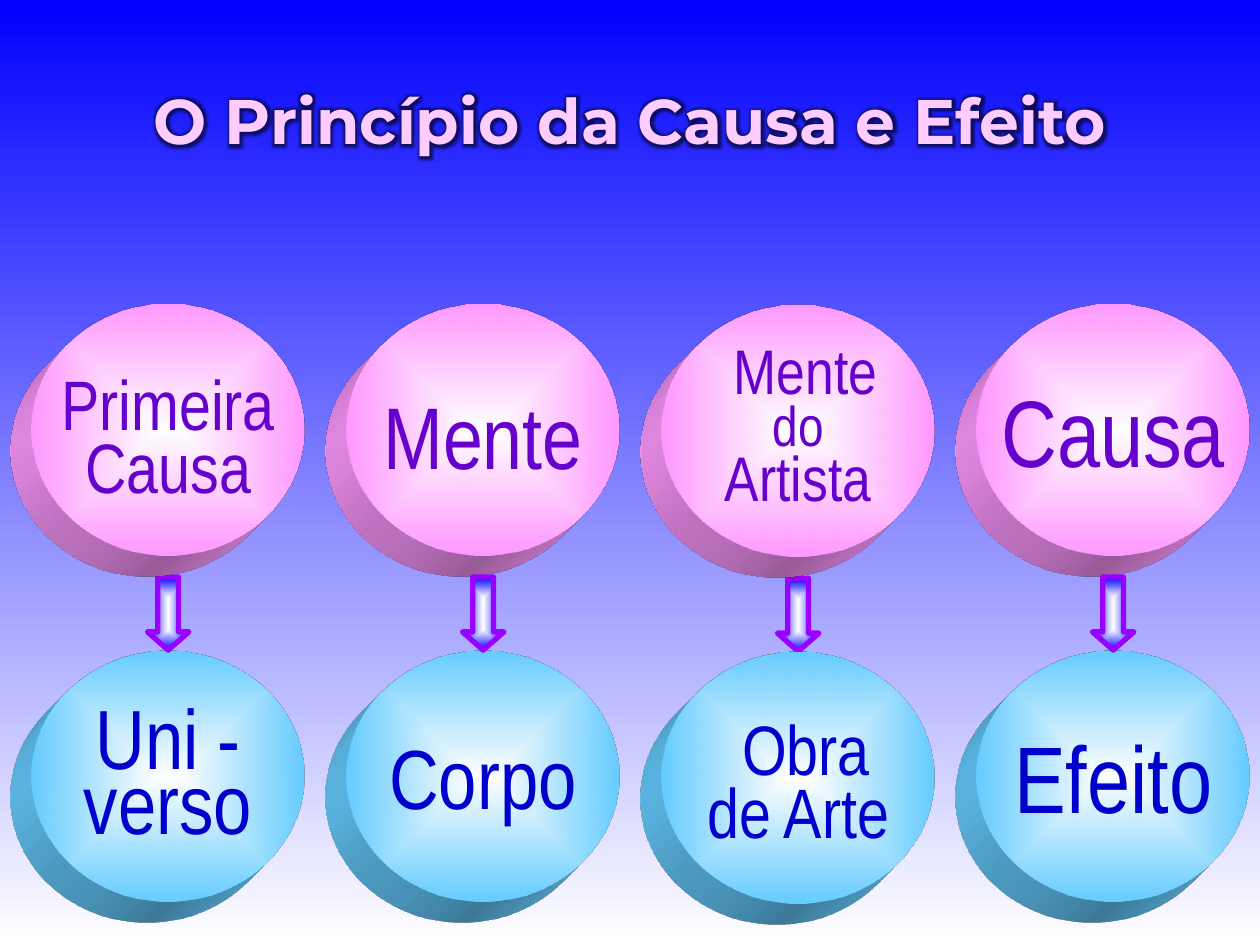
from dataclasses import dataclass

from lxml import etree
from pptx import Presentation
from pptx.dml.color import RGBColor
from pptx.enum.shapes import MSO_SHAPE
from pptx.enum.text import MSO_ANCHOR, MSO_AUTO_SIZE, PP_ALIGN
from pptx.oxml import parse_xml
from pptx.oxml.ns import qn
from pptx.util import Inches, Pt

OVAL, ARROW = MSO_SHAPE.OVAL, MSO_SHAPE.DOWN_ARROW
TOP, MIDDLE = MSO_ANCHOR.TOP, MSO_ANCHOR.MIDDLE
CENTER, FIXED = PP_ALIGN.CENTER, MSO_AUTO_SIZE.NONE
SPACE = 'xmlns:a="http://schemas.openxmlformats.org/drawingml/2006/main"'


@dataclass(frozen=True)
class Theme:
    white: str = "FFFFFF"
    blue: str = "0000FF"
    pink: str = "FF99FF"
    sky: str = "66CCFF"
    violet: str = "6600CC"
    navy: str = "0000CC"
    edge: str = "9900FF"
    blush: str = "FFCCFF"
    rim: str = "000099"
    glow: str = "000000"
    head: str = "Montserrat"
    body: str = "Arial Narrow"
    title: int = 36
    line: int = 3


THEME = Theme()
WIDE, HIGH = 10, 7.5
PITCH = WIDE / 4
INSET = PITCH / 10
DISC = (2.17, 2)
SHAFT = (0.33, 0.58)
ROWS = {"cause": 2.41, "arrow": 4.58, "effect": 5.16}
TINTS = {"cause": (THEME.pink, THEME.violet), "effect": (THEME.sky, THEME.navy)}
COLUMNS = [
    {"order": ("effect", "arrow", "cause"), "drop": 0,
     "cause": {"lines": [("Primeira", 40), ("Causa", 40)], "gap": 0.75, "pad": 0.22},
     "effect": {"lines": [("Uni -", 48), ("verso", 48)], "gap": 0.65, "pad": 0.1}},
    {"order": ("cause", "effect", "arrow"), "drop": 0,
     "cause": {"lines": [("Mente", 50)], "gap": 1.1},
     "effect": {"lines": [("Corpo", 48)]}},
    {"order": ("arrow", "cause", "effect"), "drop": 0.01,
     "cause": {"lines": [(" Mente", 36), ("do", 32), ("Artista", 36)], "gap": 0.75},
     "effect": {"lines": [(" Obra", 40), ("de Arte", 40)], "gap": 0.75, "pad": 0.17}},
    {"order": ("cause", "effect", "arrow"), "drop": 0,
     "cause": {"lines": [("Causa", 54)]},
     "effect": {"lines": [("Efeito", 54)]}},
]


def style(thing, values):
    for name, value in values.items():
        setattr(thing, name, value)


def node(text):
    return parse_xml(text.replace(">", f" {SPACE}>", 1))


def blend(fill, first, last):
    fill.gradient()
    for stop, tint, place in zip(fill.gradient_stops, (first, last), (0, 1)):
        stop.color.rgb = RGBColor.from_string(tint)
        stop.position = place


def blend_down(fill, first, last):
    blend(fill, first, last)
    fill.gradient_angle = 270


def blend_out(shape, tint, kind):
    blend(shape.fill, THEME.white, tint)
    grad = shape._element.spPr.find(qn("a:gradFill"))
    grad.remove(grad.find(qn("a:lin")))
    focus = node(f'<a:path path="{kind}"></a:path>')
    sides = {side: "50000" for side in "ltrb"}
    etree.SubElement(focus, qn("a:fillToRect"), sides)
    grad.append(focus)


def extrude(shape, tint):
    shape._element.spPr.append(node(
        '<a:scene3d><a:camera prst="legacyObliqueBottomLeft"/>'
        '<a:lightRig rig="legacyFlat3" dir="t"/></a:scene3d>'))
    shape._element.spPr.append(node(
        '<a:sp3d extrusionH="430200" prstMaterial="legacyMatte">'
        '<a:bevelT w="13500" h="13500" prst="angle"/>'
        '<a:bevelB w="13500" h="13500" prst="angle"/>'
        f'<a:extrusionClr><a:srgbClr val="{tint}"/></a:extrusionClr></a:sp3d>'))


def write(frame, lines, tint, gap=None, pad=0):
    style(frame, {"word_wrap": False, "auto_size": FIXED, "vertical_anchor": MIDDLE,
                  "margin_top": Inches(0.05 + pad)})
    for spot, (text, size) in enumerate(lines):
        para = frame.add_paragraph() if spot else frame.paragraphs[0]
        style(para, {"alignment": CENTER, "line_spacing": gap})
        run = para.add_run()
        run.text = text
        style(run.font, {"name": THEME.body, "size": Pt(size)})
        run.font.color.rgb = RGBColor.from_string(tint)


def add_form(slide, kind, left, top, size):
    box = [Inches(part) for part in (left, top, *size)]
    shape = slide.shapes.add_shape(kind, *box)
    shape.shadow.inherit = False
    return shape


def add_disc(slide, left, top, tints, words):
    face, ink = tints
    disc = add_form(slide, OVAL, left, top, DISC)
    blend_out(disc, face, "shape")
    disc.line.fill.background()
    extrude(disc, face)
    write(disc.text_frame, tint=ink, **words)


def add_arrow(slide, left, top):
    arrow = add_form(slide, ARROW, left, top, SHAFT)
    arrow.adjustments[0], arrow.adjustments[1] = 0.5, 0.44
    blend_out(arrow, THEME.blue, "rect")
    arrow.line.color.rgb = RGBColor.from_string(THEME.edge)
    arrow.line.width = Pt(THEME.line)


def add_column(slide, index, column):
    left = index * PITCH + INSET
    for part in column["order"]:
        top = ROWS[part] + column["drop"]
        if part == "arrow":
            add_arrow(slide, left + (DISC[0] - SHAFT[0]) / 2, top)
        else:
            add_disc(slide, left, top, TINTS[part], column[part])


def set_title(slide, text):
    title = slide.shapes.title
    style(title, {"left": Inches(WIDE / 30), "top": Inches(HIGH * 0.08),
                  "width": Inches(WIDE * 14 / 15), "height": Inches(1.4)})
    frame = title.text_frame
    style(frame, {"word_wrap": False, "auto_size": FIXED, "vertical_anchor": TOP})
    para = frame.paragraphs[0]
    para.alignment = CENTER
    run = para.add_run()
    run.text = text
    style(run.font, {"name": THEME.head, "size": Pt(THEME.title), "bold": True})
    blend_down(run.font.fill, THEME.blush, THEME.white)
    props = run._r.get_or_add_rPr()
    props.insert(0, node(
        f'<a:ln w="{Pt(THEME.line)}"><a:solidFill><a:srgbClr val="{THEME.rim}"/>'
        '</a:solidFill></a:ln>'))
    props.find(qn("a:gradFill")).addnext(node(
        f'<a:effectLst><a:glow rad="{Pt(6)}"><a:srgbClr val="{THEME.glow}">'
        '<a:alpha val="60000"/></a:srgbClr></a:glow></a:effectLst>'))


def main():
    deck = Presentation()
    style(deck, {"slide_width": Inches(WIDE), "slide_height": Inches(HIGH)})
    slide = deck.slides.add_slide(deck.slide_layouts[5])
    blend_down(slide.background.fill, THEME.blue, THEME.white)
    set_title(slide, "O Princípio da Causa e Efeito")
    for index, column in enumerate(COLUMNS):
        add_column(slide, index, column)
    deck.save("out.pptx")


if __name__ == "__main__":
    main()
